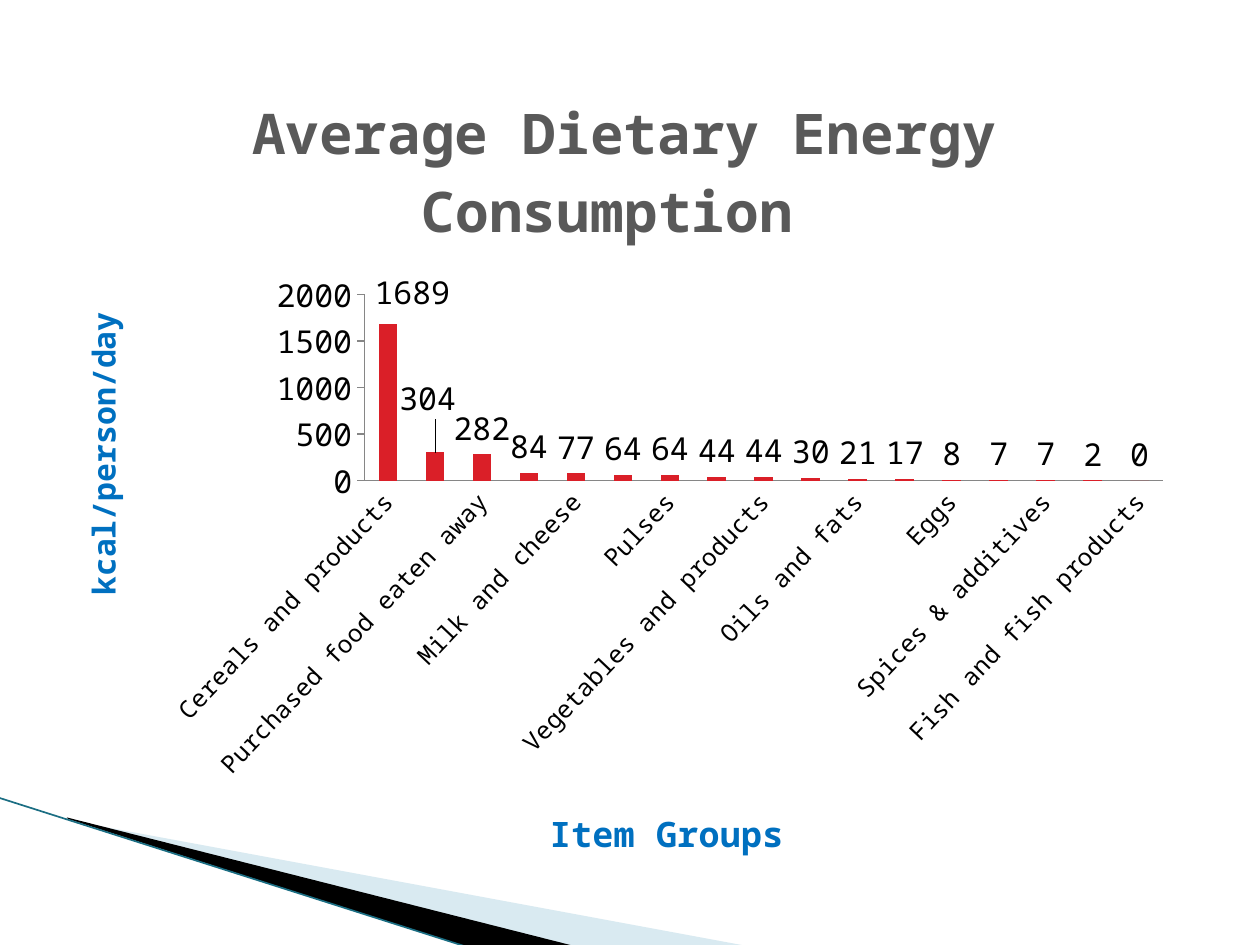
from lxml import etree
from pptx import Presentation
from pptx.chart.data import CategoryChartData
from pptx.dml.color import RGBColor
from pptx.enum.chart import XL_CHART_TYPE, XL_LABEL_POSITION, XL_TICK_MARK
from pptx.enum.shapes import MSO_CONNECTOR
from pptx.oxml.ns import qn
from pptx.util import Cm, Pt

COLUMNS = XL_CHART_TYPE.COLUMN_CLUSTERED
LABEL_ABOVE = XL_LABEL_POSITION.OUTSIDE_END
TICK_NONE = XL_TICK_MARK.NONE
TICK_OUTSIDE = XL_TICK_MARK.OUTSIDE
STRAIGHT = MSO_CONNECTOR.STRAIGHT

FONT = "Noto Sans Mono"
NUMBER_FORMAT = "###0"
ENERGY = [
    ("Cereals and products", 1689),
    ("Vegetable oils and fats", 304),
    ("Purchased food eaten away", 282),
    ("Sugars and syrups", 84),
    ("Milk and cheese", 77),
    ("Meat", 64),
    ("Pulses", 64),
    ("Fruits and products", 44),
    ("Vegetables and products", 44),
    ("Roots and tubers", 30),
    ("Oils and fats", 21),
    ("Stimulants", 17),
    ("Eggs", 8),
    ("Tree nuts", 7),
    ("Spices & additives", 7),
    ("Non alcoholic beverages", 2),
    ("Fish and fish products", 0),
]
WEDGES = [
    ("A0CBDC", 40, [(1.4, 16.54), (15.11, 19.08), (11.58, 19.08), (1.4, 16.51)]),
    ("000000", 100, [(1.35, 16.48), (11.61, 19.08), (9.45, 19.1), (1.37, 16.51)]),
]
EDGE = (-0.03, 16.08, 9.45, 19.1)
CHART_BOX = (1.3, 1.32, 22.6, 16.61)
PLOT_AREA = (6.05, 4.62, 16.1, 3.75)
LABEL_SHIFTS = {0: (0.49, -0.1), 1: (-0.15, -0.56)}
CATEGORY_ANGLE = -46.6


def color(hex_text):
    return RGBColor.from_string(hex_text)


def style_font(font, size, hex_text, bold=False):
    font.name = FONT
    font.size = Pt(size)
    font.bold = bold
    font.color.rgb = color(hex_text)


def rotate(body, degrees):
    body.set("rot", str(round(degrees * 60000)))
    body.set("vert", "horz")


def place(element, lengths, after=None, edge=True, inner=False):
    for old in element.findall(qn("c:layout")):
        element.remove(old)
    layout = etree.Element(qn("c:layout"))
    manual = etree.SubElement(layout, qn("c:manualLayout"))
    if inner:
        etree.SubElement(manual, qn("c:layoutTarget"), val="inner")
    if edge:
        for name in ("xMode", "yMode"):
            etree.SubElement(manual, qn("c:" + name), val="edge")
    for name, length, whole in zip("xywh", lengths, CHART_BOX[2:] * 2):
        etree.SubElement(manual, qn("c:" + name), val=str(length / whole))
    index = element.index(element.find(qn(after))) + 1 if after else 0
    element.insert(index, layout)


def set_title(title, text, size, hex_text, position):
    frame = title.text_frame
    frame.text = text
    style_font(frame.paragraphs[0].runs[0].font, size, hex_text, True)
    place(title._element, position, "c:tx")


def add_wedge(slide, hex_text, opacity, points):
    corners = [(Cm(x), Cm(y)) for x, y in points]
    builder = slide.shapes.build_freeform(*corners[0])
    builder.add_line_segments(corners[1:])
    shape = builder.convert_to_shape()
    shape.shadow.inherit = False
    shape.line.fill.background()
    shape.fill.solid()
    shape.fill.fore_color.rgb = color(hex_text)
    if opacity < 100:
        fill = shape._element.spPr.find(qn("a:solidFill"))
        etree.SubElement(fill[0], qn("a:alpha"), val=str(opacity * 1000))


def add_edge(slide):
    connector = slide.shapes.add_connector(STRAIGHT, *map(Cm, EDGE))
    connector.line.color.rgb = color("1B6E83")
    connector.line.width = Pt(0.95)
    etree.SubElement(connector._element.spPr, qn("a:effectLst"))


def style_axis(axis, size, tick):
    axis.has_major_gridlines = False
    axis.major_tick_mark = tick
    axis.minor_tick_mark = TICK_NONE
    axis.format.line.color.rgb = color("868686")
    style_font(axis.tick_labels.font, size, "000000")


def style_labels(series):
    labels = series.data_labels
    labels.show_value = True
    labels.number_format = NUMBER_FORMAT
    labels.number_format_is_linked = False
    labels.position = LABEL_ABOVE
    style_font(labels.font, 18, "000000")
    for leader in labels._element.findall(qn("c:showLeaderLines")):
        labels._element.remove(leader)
    for index, shift in LABEL_SHIFTS.items():
        label = series.points[index].data_label
        style_font(label.font, 18, "000000")
        label.position = LABEL_ABOVE
        element = labels._element.findall(qn("c:dLbl"))[index]
        place(element, shift, "c:idx", edge=False)


def add_energy_chart(slide):
    data = CategoryChartData(number_format=NUMBER_FORMAT)
    data.categories = [name for name, _ in ENERGY]
    data.add_series("Series 1", [value for _, value in ENERGY])
    chart = slide.shapes.add_chart(COLUMNS, *map(Cm, CHART_BOX), data).chart
    style_font(chart.font, 10, "000000")
    chart.has_legend = False
    categories, values = chart.category_axis, chart.value_axis

    set_title(chart.chart_title, "Average Dietary Energy Consumption ",
              32, "595959", (3.58, 0.24))
    set_title(categories.axis_title, "Item Groups", 20, "0070C0", (9.66, 14.79))
    set_title(values.axis_title, "kcal/person/day", 18, "0070C0", (0.15, 4.86))
    rotate(values.axis_title.text_frame._txBody.find(qn("a:bodyPr")), -90)

    style_axis(categories, 14, TICK_NONE)
    rotate(categories._element.find(qn("c:txPr")).find(qn("a:bodyPr")), CATEGORY_ANGLE)
    style_axis(values, 18, TICK_OUTSIDE)
    values.minimum_scale, values.maximum_scale, values.major_unit = 0, 2000, 500
    values.tick_labels.number_format = NUMBER_FORMAT
    values.tick_labels.number_format_is_linked = False

    plot = chart.plots[0]
    plot.gap_width = 150
    plot.vary_by_categories = False
    series = plot.series[0]
    series.format.fill.solid()
    series.format.fill.fore_color.rgb = color("DA1F28")
    style_labels(series)
    place(plot._element.getparent(), PLOT_AREA, inner=True)


def main():
    presentation = Presentation()
    presentation.slide_width, presentation.slide_height = Cm(25.4), Cm(19.05)
    slide = presentation.slides.add_slide(presentation.slide_layouts[6])
    for wedge in WEDGES:
        add_wedge(slide, *wedge)
    add_edge(slide)
    add_energy_chart(slide)
    presentation.save("out.pptx")


if __name__ == "__main__":
    main()
